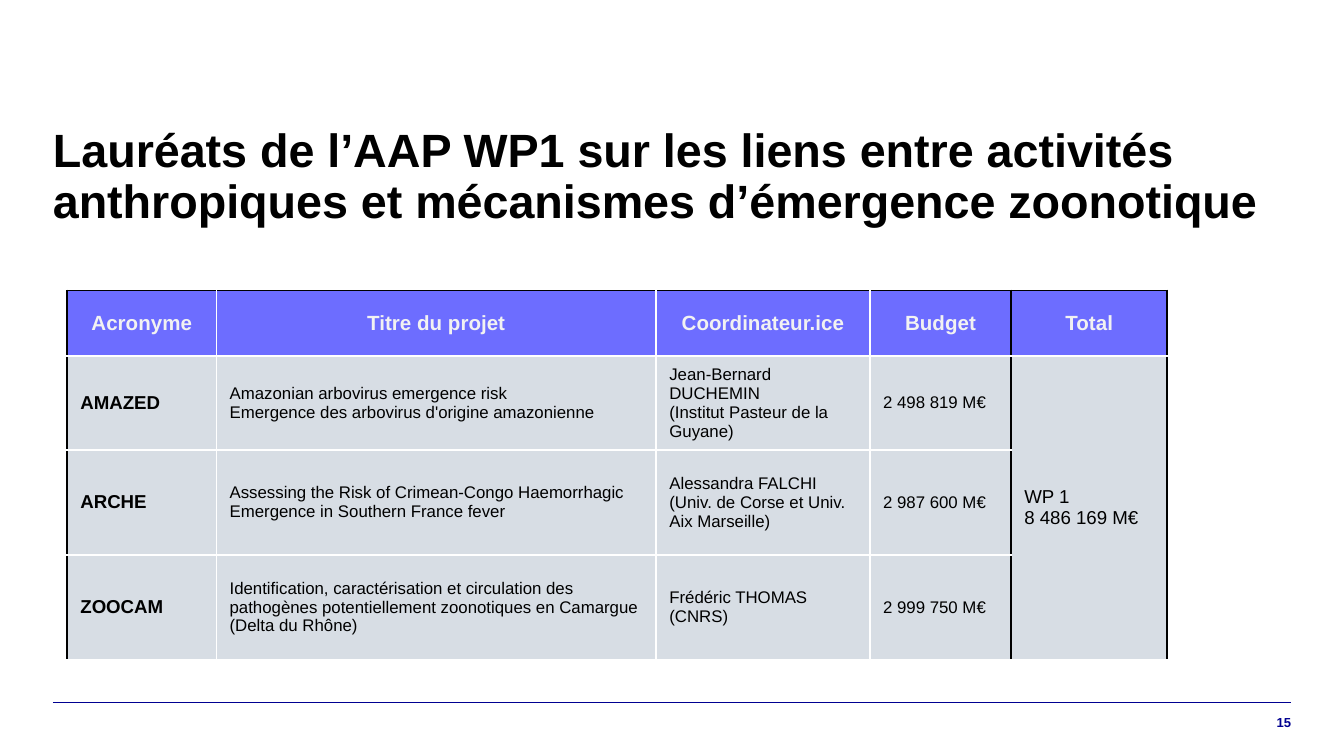
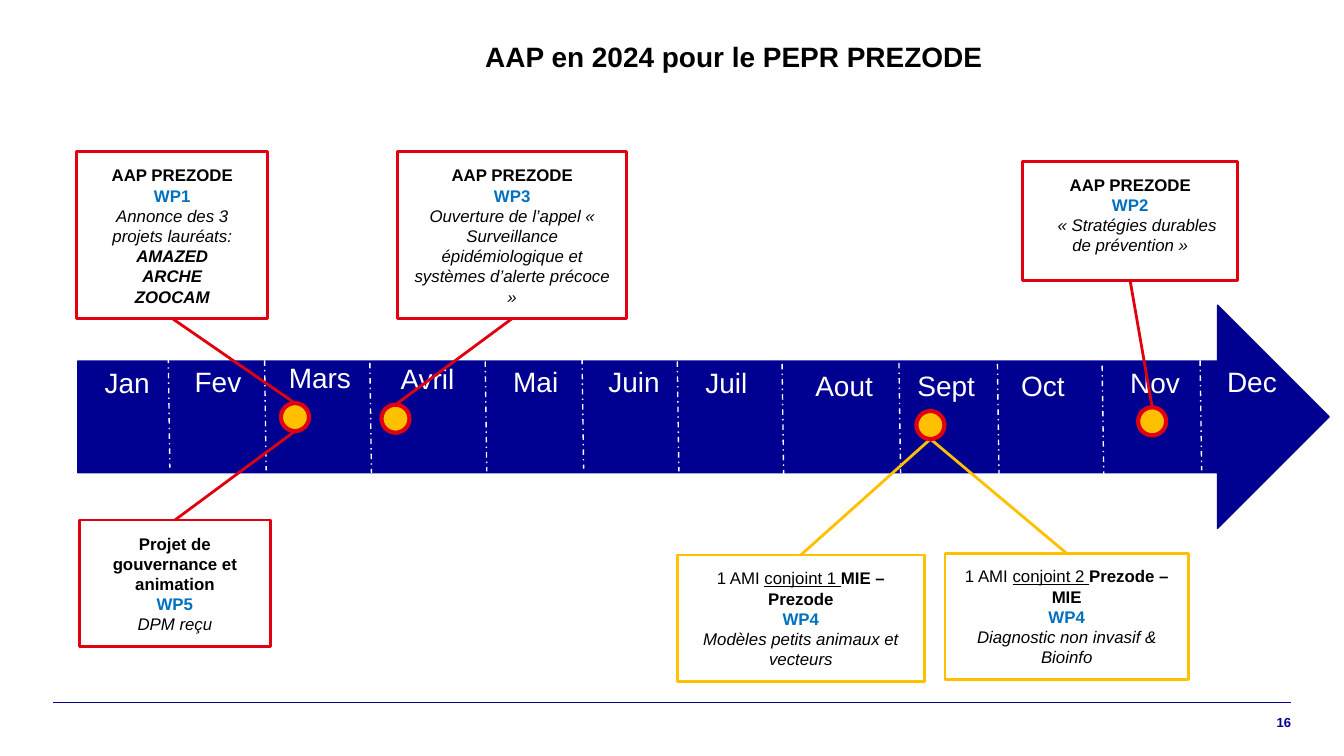
from dataclasses import dataclass
from typing import Optional, Sequence

from lxml import etree
from pptx import Presentation
from pptx.dml.color import RGBColor
from pptx.enum.dml import MSO_LINE
from pptx.enum.shapes import MSO_CONNECTOR, MSO_SHAPE
from pptx.enum.text import MSO_ANCHOR, MSO_AUTO_SIZE, PP_ALIGN
from pptx.oxml.ns import qn
from pptx.util import Cm, Pt

LEFT, CENTER, RIGHT = PP_ALIGN.LEFT, PP_ALIGN.CENTER, PP_ALIGN.RIGHT
TOP, MIDDLE = MSO_ANCHOR.TOP, MSO_ANCHOR.MIDDLE
STRAIGHT = MSO_CONNECTOR.STRAIGHT
DASH_DOT = MSO_LINE.DASH_DOT
RECTANGLE, ELLIPSE, RIGHT_ARROW = MSO_SHAPE.RECTANGLE, MSO_SHAPE.OVAL, MSO_SHAPE.RIGHT_ARROW
SIDE_TOP, SIDE_BOTTOM = 0, 2
TITLE_ONLY = 5


@dataclass(frozen=True)
class Theme:
    font: str = "Arial"
    black: str = "000000"
    white: str = "FFFFFF"
    navy: str = "000091"
    blue: str = "0070C0"
    red: str = "E1000F"
    yellow: str = "FFC000"
    header_fill: str = "6D6DFF"
    header_text: str = "F2F2F2"
    cell_fill: str = "D7DDE4"
    large_title: float = 25
    small_title: float = 15
    month: float = 15
    header: float = 11
    strong: float = 10
    body: float = 9
    number: float = 7


THEME = Theme()


@dataclass(frozen=True)
class Run:
    text: str
    bold: bool = False
    italic: bool = False
    underline: bool = False
    color: str = THEME.black
    size: float = THEME.body


@dataclass(frozen=True)
class Line:
    runs: Sequence[Run]
    indent: float = 0


@dataclass(frozen=True)
class Month:
    name: str
    left: float
    top: float
    width: float
    divider: Optional[tuple] = None


@dataclass(frozen=True)
class Dot:
    left: float
    top: float


@dataclass(frozen=True)
class Callout:
    left: float
    top: float
    width: float
    height: float
    color: str
    dot: Dot
    lines: Sequence[Line]
    anchor: MSO_ANCHOR = TOP


# Text content helpers
def plain(text: str, **style) -> Line:
    return Line((Run(text, **style),))


def bold(text: str, **style) -> Line:
    return plain(text, bold=True, **style)


def italic(text: str) -> Line:
    return plain(text, italic=True)


def package(number: int) -> Line:
    return bold(f"WP{number}", color=THEME.blue)


# Drawing helpers
def write(frame, lines: Sequence[Line], align=LEFT, spacing: Optional[float] = None) -> None:
    for index, line in enumerate(lines):
        paragraph = frame.add_paragraph() if index else frame.paragraphs[0]
        paragraph.alignment = align
        if spacing:
            paragraph.line_spacing = spacing
        if line.indent:
            paragraph._p.get_or_add_pPr().set("indent", str(Cm(line.indent)))
        for part in line.runs:
            run = paragraph.add_run()
            run.text = part.text
            font = run.font
            font.name, font.size = THEME.font, Pt(part.size)
            font.bold, font.italic, font.underline = part.bold, part.italic, part.underline
            font.color.rgb = RGBColor.from_string(part.color)


def set_frame(frame, horizontal: float, vertical: float, anchor=TOP, wrap: bool = True) -> None:
    frame.word_wrap = wrap
    frame.auto_size = MSO_AUTO_SIZE.NONE
    frame.vertical_anchor = anchor
    frame.margin_left = frame.margin_right = Cm(horizontal)
    frame.margin_top = frame.margin_bottom = Cm(vertical)


def add_line(slide, start: tuple, end: tuple, color: str, width: float, dash=None):
    connector = slide.shapes.add_connector(STRAIGHT, *map(Cm, start + end))
    connector.line.color.rgb = RGBColor.from_string(color)
    connector.line.width = Pt(width)
    if dash is not None:
        connector.line.dash_style = dash
    etree.SubElement(connector._element.spPr, qn("a:effectLst"))
    return connector


def add_outline(slide, kind, box: tuple, fill: Optional[str], color: str, width: float):
    shape = slide.shapes.add_shape(kind, *map(Cm, box))
    shape.shadow.inherit = False
    if fill:
        shape.fill.solid()
        shape.fill.fore_color.rgb = RGBColor.from_string(fill)
    else:
        shape.fill.background()
    shape.line.color.rgb = RGBColor.from_string(color)
    shape.line.width = Pt(width)
    return shape


def add_page(presentation, title: str, box: tuple, size: float, number: int):
    slide = presentation.slides.add_slide(presentation.slide_layouts[TITLE_ONLY])
    heading = slide.shapes.title
    heading.left, heading.top, heading.width, heading.height = map(Cm, box)
    set_frame(heading.text_frame, 0, 0)
    write(heading.text_frame, [bold(title, size=size)], spacing=0.9)
    # Footer rule and page number
    add_line(slide, (1, 13.28), (24.4, 13.28), THEME.navy, 0.75)
    footer = slide.shapes.add_textbox(Cm(23.1), Cm(13.28), Cm(1.3), Cm(0.76))
    set_frame(footer.text_frame, 0, 0, MIDDLE)
    write(footer.text_frame, [bold(str(number), size=THEME.number, color=THEME.navy)], RIGHT)
    return slide


# Table of laureates
COLUMN_WIDTHS = (2.82, 8.31, 4.04, 2.67, 2.95)
ROW_HEIGHTS = (1.24, 1.78, 1.98, 1.98)
HEADERS = ("Acronyme", "Titre du projet", "Coordinateur.ice", "Budget", "Total")
PROJECTS = (
    ("AMAZED",
     ("Amazonian arbovirus emergence risk", "Emergence des arbovirus d'origine amazonienne"),
     ("Jean-Bernard DUCHEMIN", "(Institut Pasteur de la Guyane)"),
     ("2 498 819 M€",)),
    ("ARCHE",
     ("Assessing the Risk of Crimean-Congo Haemorrhagic Emergence in Southern France fever",),
     ("Alessandra FALCHI", "(Univ. de Corse et Univ. Aix Marseille)"),
     ("2 987 600 M€",)),
    ("ZOOCAM",
     ("Identification, caractérisation et circulation des pathogènes potentiellement "
      "zoonotiques en Camargue (Delta du Rhône)",),
     ("Frédéric THOMAS", "(CNRS)"),
     ("2 999 750 M€",)),
)
TOTAL = ("WP 1", "8 486 169 M€")


def set_borders(cell, black_sides: dict) -> None:
    properties = cell._tc.get_or_add_tcPr()
    for position, (side, is_black) in enumerate(black_sides.items()):
        border = etree.Element(qn(f"a:ln{side}"), w=str(Pt(1)))
        fill = etree.SubElement(border, qn("a:solidFill"))
        etree.SubElement(fill, qn("a:srgbClr"), val=THEME.black if is_black else THEME.white)
        properties.insert(position, border)


def add_laureates(slide) -> None:
    row_count, column_count = len(ROW_HEIGHTS), len(COLUMN_WIDTHS)
    frame = slide.shapes.add_table(row_count, column_count, Cm(1.27), Cm(5.49),
                                   Cm(sum(COLUMN_WIDTHS)), Cm(sum(ROW_HEIGHTS)))
    table = frame.table
    table.horz_banding = False
    for column, width in zip(table.columns, COLUMN_WIDTHS):
        column.width = Cm(width)
    for row, height in zip(table.rows, ROW_HEIGHTS):
        row.height = Cm(height)

    # Fills and borders: the total column is framed in black
    last_row, total = row_count - 1, column_count - 1
    for row in range(row_count):
        for column in range(column_count):
            cell = table.cell(row, column)
            cell.vertical_anchor = MIDDLE
            cell.margin_left = cell.margin_right = Cm(0.25)
            cell.margin_top = cell.margin_bottom = Cm(0.13)
            cell.fill.solid()
            fill = cell_color = THEME.cell_fill if row else THEME.header_fill
            cell.fill.fore_color.rgb = RGBColor.from_string(cell_color)
            set_borders(cell, {"L": column in (0, total), "R": column >= total - 1,
                               "T": row == 0, "B": row == last_row and column == total})
    table.cell(1, total).merge(table.cell(last_row, total))

    # Wording
    for column, label in enumerate(HEADERS):
        write(table.cell(0, column).text_frame,
              [bold(label, size=THEME.header, color=THEME.header_text)], CENTER)
    for row, (acronym, *details) in enumerate(PROJECTS, 1):
        write(table.cell(row, 0).text_frame, [bold(acronym, size=THEME.strong)])
        for column, texts in enumerate(details, 1):
            write(table.cell(row, column).text_frame, [plain(text) for text in texts])
    write(table.cell(1, total).text_frame, [plain(text, size=THEME.strong) for text in TOTAL])


# Timeline of calls
DOT_SIZE = 0.53
MARCH, APRIL = Dot(5.31, 7.62), Dot(7.21, 7.65)
SEPTEMBER, NOVEMBER = Dot(17.32, 7.77), Dot(21.51, 7.7)
MONTHS = (
    Month("Jan", 1.73, 6.78, 1.37, (3.18, 6.76)),
    Month("Fev", 3.43, 6.76, 1.4, (5, 6.81)),
    Month("Mars", 5.21, 6.68, 1.83, (6.99, 6.86)),
    Month("Avril", 7.32, 6.71, 1.68, (9.17, 6.83)),
    Month("Mai", 9.45, 6.76, 1.52, (11, 6.78)),
    Month("Juin", 11.25, 6.76, 1.55, (12.8, 6.83)),
    Month("Juil", 13.08, 6.78, 1.35, (14.78, 6.88)),
    Month("Aout", 15.16, 6.83, 1.78, (16.99, 6.86)),
    Month("Sept", 17.09, 6.83, 1.68, (18.85, 6.88)),
    Month("Oct", 19.05, 6.83, 1.42, (20.83, 6.91)),
    Month("Nov", 21.11, 6.78, 1.55, (22.68, 6.81)),
    Month("Dec", 22.94, 6.76, 1.5),
)
CALL = bold("AAP PREZODE")


def joint_call(number: int, partners: str) -> Line:
    return Line((Run("1 AMI "), Run(f"conjoint {number} ", underline=True),
                 Run(partners, bold=True)))


CALLOUTS = (
    Callout(1.45, 2.87, 3.61, 3.15, THEME.red, MARCH,
            (CALL, package(1), italic("Annonce des 3 projets lauréats:"),
             *(bold(project[0], italic=True) for project in PROJECTS))),
    Callout(7.52, 2.87, 4.32, 3.15, THEME.red, APRIL,
            (CALL, package(3), italic("Ouverture de l’appel « Surveillance épidémiologique "
                                      "et systèmes d’alerte précoce »"))),
    Callout(19.33, 3.05, 4.06, 2.26, THEME.red, NOVEMBER,
            (CALL, package(2),
             Line((Run("« Stratégies durables de prévention »", italic=True),), indent=0.26))),
    Callout(1.5, 9.83, 3.61, 2.39, THEME.red, MARCH,
            (bold("Projet de gouvernance et animation"), package(5), italic("DPM reçu"))),
    Callout(12.8, 10.49, 4.67, 2.39, THEME.yellow, SEPTEMBER,
            (joint_call(1, "MIE – Prezode"), package(4),
             italic("Modèles petits animaux et vecteurs"))),
    Callout(17.86, 10.46, 4.6, 2.39, THEME.yellow, SEPTEMBER,
            (joint_call(2, "Prezode – MIE"), package(4),
             italic("Diagnostic non invasif & Bioinfo")), MIDDLE),
)


def add_month(slide, month: Month) -> None:
    label = slide.shapes.add_textbox(*map(Cm, (month.left, month.top, month.width, 0.89)))
    set_frame(label.text_frame, 0.25, 0.13, wrap=False)
    write(label.text_frame, [plain(month.name, size=THEME.month, color=THEME.white)])
    if month.divider:
        left, top = month.divider
        add_line(slide, (left, top), (left + 0.03, top + 2.08), THEME.white, 0.75, DASH_DOT)


def add_callout(slide, callout: Callout) -> None:
    box = (callout.left, callout.top, callout.width, callout.height)
    shape = add_outline(slide, RECTANGLE, box, None, callout.color, 1.5)
    set_frame(shape.text_frame, 0.25, 0.25, callout.anchor)
    write(shape.text_frame, callout.lines, CENTER)
    # Link from the facing side of the box to the edge of the dot
    dot = callout.dot
    above = callout.top < dot.top
    end = (dot.left + DOT_SIZE / 2, dot.top if above else dot.top + DOT_SIZE)
    start = (callout.left + callout.width / 2, callout.top + callout.height * above)
    link = add_line(slide, start, end, callout.color, 1.5)
    link.begin_connect(shape, SIDE_BOTTOM if above else SIDE_TOP)


def add_timeline(slide) -> None:
    add_outline(slide, RIGHT_ARROW, (1.47, 5.77, 23.65, 4.22), THEME.navy, THEME.navy, 0.75)
    for month in MONTHS:
        add_month(slide, month)
    for callout in CALLOUTS:
        add_callout(slide, callout)
    for dot in (MARCH, APRIL, SEPTEMBER, NOVEMBER):
        add_outline(slide, ELLIPSE, (dot.left, dot.top, DOT_SIZE, DOT_SIZE),
                    THEME.yellow, THEME.red, 2.25)


def main() -> None:
    presentation = Presentation()
    presentation.slide_width, presentation.slide_height = Cm(25.4), Cm(14.29)
    add_laureates(add_page(
        presentation, "Lauréats de l’AAP WP1 sur les liens entre activités anthropiques "
        "et mécanismes d’émergence zoonotique", (1, 2.41, 23.4, 1.5), THEME.large_title, 15))
    add_timeline(add_page(presentation, "AAP en 2024 pour le PEPR PREZODE",
                          (9.17, 0.81, 15.23, 1.5), THEME.small_title, 16))
    presentation.save("out.pptx")


if __name__ == "__main__":
    main()
